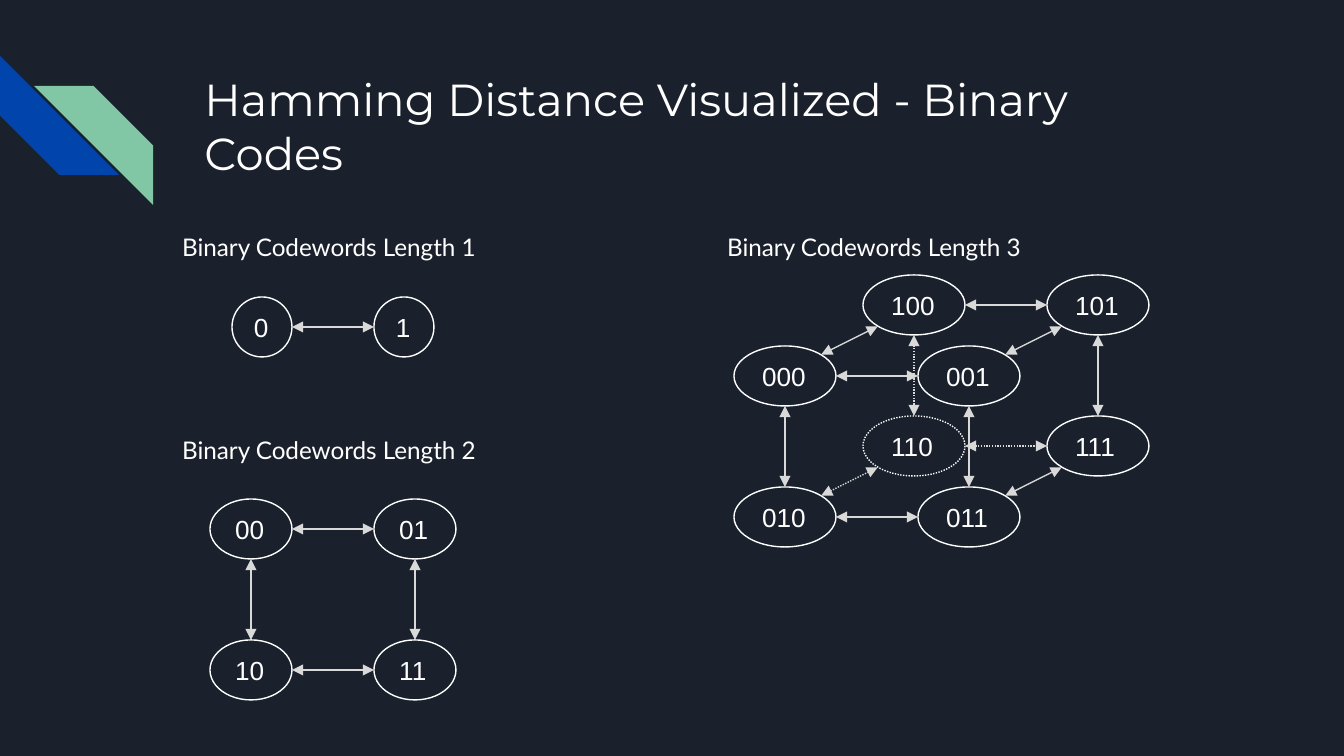
import dataclasses
import itertools
import typing

import pptx
import pptx.dml.color
import pptx.enum.dml
import pptx.enum.shapes
import pptx.enum.text
import pptx.oxml.ns
import pptx.util
from lxml import etree

WIDE, HIGH = 1344, 756
SCALE = 9144000 / WIDE
SHAPE = pptx.enum.shapes.MSO_SHAPE
ANCHOR = pptx.enum.text.MSO_ANCHOR
DOT = pptx.enum.dml.MSO_LINE.ROUND_DOT


@dataclasses.dataclass(frozen=True)
class Theme:
    back: str = "1B212C"
    text: str = "FFFFFF"
    edge: str = "D9D9D9"
    blue: str = "0145AC"
    green: str = "82C7A5"
    title: tuple = ("Montserrat", 24)
    head: tuple = ("Lato", 13)
    node: tuple = ("Arial", 14)
    line: float = 0.75
    inset: float = 0.1


class Stripe(typing.NamedTuple):
    left: int
    top: int
    turn: int
    color: str


class Cube(typing.NamedTuple):
    """Graph of all codewords of one length; left, top place its heading."""
    bits: int
    left: int
    top: int
    start: tuple
    width: int
    steps: tuple
    hidden: str = ""


THEME = Theme()
SIDE = 119
NODE_H = 60
# Unit vectors from a node's centre to its rim: right, down, back
RIMS = ((1, 0), (0, 1), (0.71, -0.71))

STRIPES = (
    Stripe(0, 56, 270, THEME.blue),
    Stripe(34, 86, 90, THEME.green),
)
CUBES = (
    Cube(1, 169, 214, (262, 327), 60, ((142, 0),)),
    Cube(2, 169, 417, (251, 529), 82, ((164, 0), (0, 141))),
    Cube(3, 714, 214, (785, 376), 102, ((184, 0), (0, 141), (129, -71)), "110"),
)


def emu(*lengths: float) -> list:
    return [pptx.util.Emu(round(n * SCALE)) for n in lengths]


def rgb(color: str) -> pptx.dml.color.RGBColor:
    return pptx.dml.color.RGBColor.from_string(color)


def put(thing: typing.Any, values: dict) -> None:
    for name, value in values.items():
        setattr(thing, name, value)


def write(shape: typing.Any, text: str, face: tuple, anchor: typing.Any,
          space: float = 1.0) -> None:
    frame = shape.text_frame
    inset = pptx.util.Inches(THEME.inset)
    sides = ("left", "top", "right", "bottom")
    put(frame, {f"margin_{side}": inset for side in sides})
    put(frame, {"text": text, "word_wrap": True, "vertical_anchor": anchor,
                "auto_size": pptx.enum.text.MSO_AUTO_SIZE.NONE})
    par = frame.paragraphs[0]
    put(par, {"alignment": pptx.enum.text.PP_ALIGN.LEFT, "line_spacing": space})
    font = par.runs[0].font
    put(font, {"name": face[0], "size": pptx.util.Pt(face[1])})
    font.color.rgb = rgb(THEME.text)


def stroke(line: typing.Any, color: str, dotted: bool) -> None:
    line.color.rgb = rgb(color)
    line.width = pptx.util.Pt(THEME.line)
    if dotted:
        line.dash_style = DOT


def draw_stripe(slide: typing.Any, stripe: Stripe) -> None:
    box = emu(stripe.left, stripe.top, SIDE, SIDE)
    shape = slide.shapes.add_shape(SHAPE.DIAGONAL_STRIPE, *box)
    shape.shadow.inherit = False
    shape.adjustments[0] = 0.5
    shape.rotation = stripe.turn
    shape.fill.solid()
    shape.fill.fore_color.rgb = rgb(stripe.color)
    shape.line.fill.background()


def draw_node(slide: typing.Any, code: str, spot: tuple, cube: Cube) -> None:
    left, top = spot[0] - cube.width / 2, spot[1] - NODE_H / 2
    shape = slide.shapes.add_shape(
        SHAPE.OVAL, *emu(left, top, cube.width, NODE_H))
    shape.shadow.inherit = False
    shape.fill.background()
    stroke(shape.line, THEME.text, code == cube.hidden)
    write(shape, code, THEME.node, ANCHOR.MIDDLE)


def draw_edge(slide: typing.Any, start: tuple, end: tuple, dotted: bool) -> None:
    link = slide.shapes.add_connector(
        pptx.enum.shapes.MSO_CONNECTOR.STRAIGHT, *emu(*start, *end))
    stroke(link.line, THEME.edge, dotted)
    line = link.line._get_or_add_ln()
    for tag in ("a:headEnd", "a:tailEnd"):
        etree.SubElement(line, pptx.oxml.ns.qn(tag), type="triangle")
    etree.SubElement(link._element.spPr, pptx.oxml.ns.qn("a:effectLst"))


def locate(code: str, cube: Cube) -> tuple:
    """Centre of a codeword; its last bit moves right, then down, then back."""
    x, y = cube.start
    for bit, (dx, dy) in zip(reversed(code), cube.steps):
        x, y = x + int(bit) * dx, y + int(bit) * dy
    return x, y


def draw_cube(slide: typing.Any, cube: Cube) -> None:
    head = slide.shapes.add_textbox(*emu(cube.left, cube.top, 328, 59))
    write(head, f"Binary Codewords Length {cube.bits}", THEME.head,
          ANCHOR.TOP, 1.15)
    codes = ["".join(bits) for bits in itertools.product("01", repeat=cube.bits)]
    spots = {code: locate(code, cube) for code in codes}
    for code, spot in spots.items():
        draw_node(slide, code, spot, cube)
    for low, high in itertools.combinations(codes, 2):
        diff = [i for i in range(cube.bits) if low[i] != high[i]]
        if len(diff) != 1:
            continue
        rim = RIMS[cube.bits - 1 - diff[0]]
        dx, dy = rim[0] * cube.width / 2, rim[1] * NODE_H / 2
        (x1, y1), (x2, y2) = spots[low], spots[high]
        draw_edge(slide, (x1 + dx, y1 + dy), (x2 - dx, y2 - dy),
                  cube.hidden in (low, high))


def main() -> None:
    deck = pptx.Presentation()
    deck.slide_width, deck.slide_height = emu(WIDE, HIGH)
    slide = deck.slides.add_slide(deck.slide_layouts[5])
    slide.background.fill.solid()
    slide.background.fill.fore_color.rgb = rgb(THEME.back)
    for stripe in STRIPES:
        draw_stripe(slide, stripe)
    title = slide.shapes.title
    put(title, dict(zip(("left", "top", "width", "height"),
                        emu(191, 58, 1035, 134))))
    write(title, "Hamming Distance Visualized - Binary Codes", THEME.title,
          ANCHOR.TOP)
    for cube in CUBES:
        draw_cube(slide, cube)
    deck.save("out.pptx")


if __name__ == "__main__":
    main()
